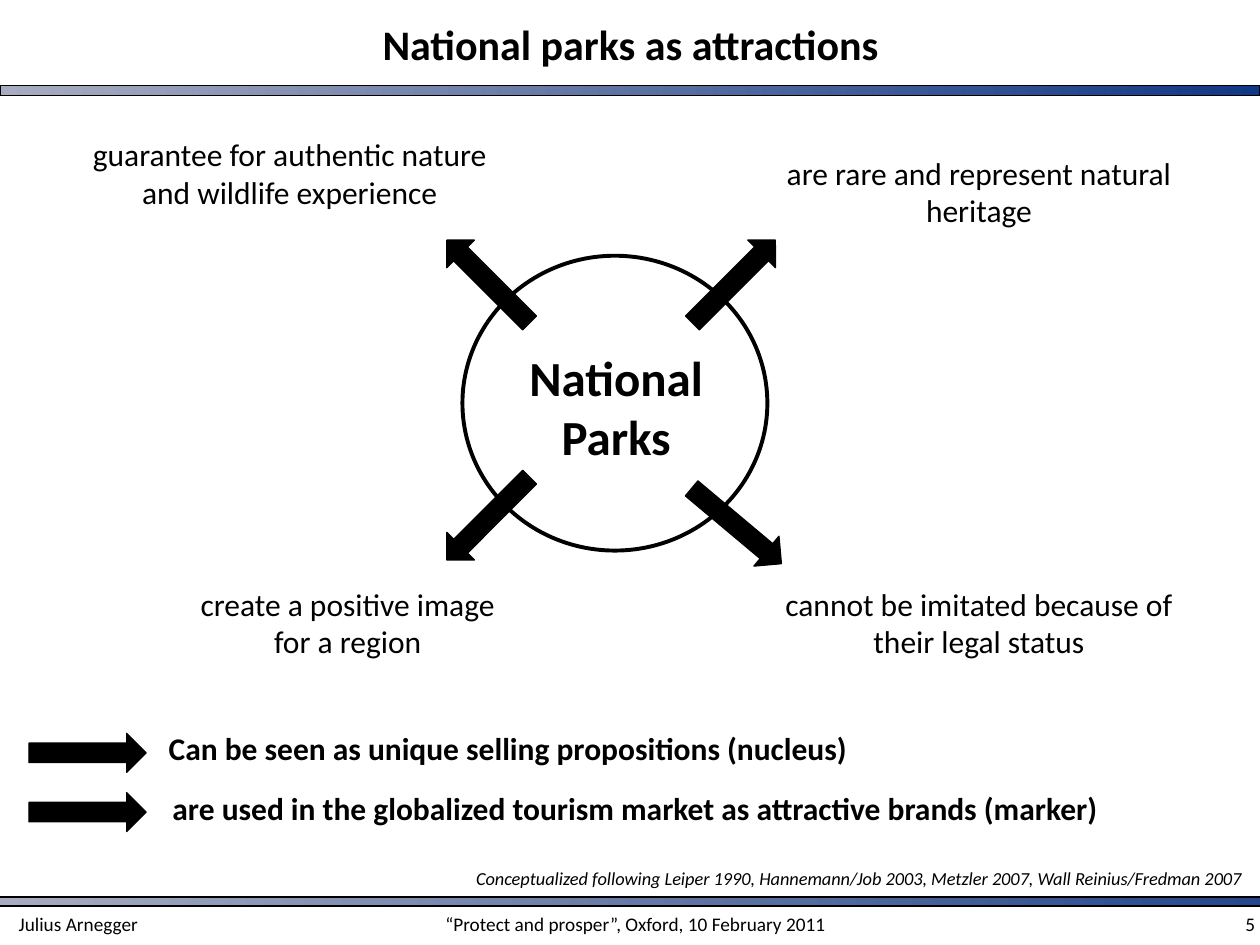
from dataclasses import dataclass
from pptx import Presentation
from pptx.dml.color import RGBColor
from pptx.enum.shapes import MSO_SHAPE
from pptx.enum.text import MSO_ANCHOR, PP_ALIGN
from pptx.util import Inches, Pt


@dataclass(frozen=True)
class Theme:
    font: str = "Calibri"
    ink: RGBColor = RGBColor(0, 0, 0)
    pale: RGBColor = RGBColor(0xA8, 0xAC, 0xC0)
    deep: RGBColor = RGBColor(0x11, 0x38, 0x85)
    title: float = 24
    hub: float = 28
    body: float = 18
    foot: float = 11
    cite: float = 10.5
    thin: float = 0.75
    thick: float = 2.25


@dataclass(frozen=True)
class Box:
    col: float
    row: float
    cols: float
    rows: float


@dataclass(frozen=True)
class Label:
    text: str
    box: Box
    size: float
    align: PP_ALIGN = PP_ALIGN.CENTER
    bold: bool = False
    slant: bool = False
    wrap: bool = True
    anchor: MSO_ANCHOR = MSO_ANCHOR.TOP


@dataclass(frozen=True)
class Arrow:
    col: float
    row: float
    turn: float


LOOK = Theme()
COLS, ROWS = 100, 75
LEFT, RIGHT = PP_ALIGN.LEFT, PP_ALIGN.RIGHT

deck = Presentation()
deck.slide_width, deck.slide_height = Inches(10), Inches(7.5)
slide = deck.slides.add_slide(deck.slide_layouts[6])


def place(box: Box) -> tuple[int, int, int, int]:
    wide, high = deck.slide_width / COLS, deck.slide_height / ROWS
    return (round(box.col * wide), round(box.row * high),
            round(box.cols * wide), round(box.rows * high))


def draw_shape(kind: MSO_SHAPE, box: Box, line: float):
    shape = slide.shapes.add_shape(kind, *place(box))
    shape.shadow.inherit = False
    shape.line.color.rgb = LOOK.ink
    shape.line.width = Pt(line)
    return shape


def draw_bar(box: Box) -> None:
    fill = draw_shape(MSO_SHAPE.RECTANGLE, box, LOOK.thin).fill
    fill.gradient()
    fill.gradient_angle = 0
    for stop, tint in zip(fill.gradient_stops, (LOOK.pale, LOOK.deep)):
        stop.color.rgb = tint


def draw_arrow(arrow: Arrow) -> None:
    box = Box(arrow.col, arrow.row, 3.1, 9.3)
    shape = draw_shape(MSO_SHAPE.UP_ARROW, box, LOOK.thin)
    shape.fill.solid()
    shape.fill.fore_color.rgb = LOOK.ink
    shape.rotation = arrow.turn


def draw_label(label: Label) -> None:
    frame = slide.shapes.add_textbox(*place(label.box)).text_frame
    frame.word_wrap = label.wrap
    frame.vertical_anchor = label.anchor
    para = frame.paragraphs[0]
    para.alignment = label.align
    run = para.add_run()
    run.text = label.text
    font = run.font
    font.name, font.size = LOOK.font, Pt(label.size)
    font.bold, font.italic = label.bold, label.slant
    font.color.rgb = LOOK.ink


BARS = [Box(0, 6.8, 100, 0.8), Box(-0.1, 71.2, 114.9, 0.7)]

ARROWS = [
    Arrow(37.2, 17.7, 315),
    Arrow(56.7, 17.7, 45),
    Arrow(37.2, 36.5, 225),
    Arrow(56.9, 37.1, 130),
    Arrow(5.4, 55.1, 90),
    Arrow(5.4, 59.8, 90),
]

LABELS = [
    Label("National parks as attractions", Box(16.7, 0, 66.7, 7),
          LOOK.title, bold=True, anchor=MSO_ANCHOR.MIDDLE),
    Label("National Parks", Box(39.5, 27.1, 18.8, 10.4), LOOK.hub, bold=True),
    Label("guarantee for authentic nature and wildlife experience",
          Box(6.2, 10.2, 33.6, 7.1), LOOK.body),
    Label("are rare and represent natural heritage",
          Box(60.9, 11.7, 33.6, 7.1), LOOK.body),
    Label("create a positive image for a region",
          Box(13.8, 45.9, 27.6, 7.1), LOOK.body),
    Label("cannot be imitated because of their legal status",
          Box(60.9, 45.9, 33.6, 7.1), LOOK.body),
    Label("Can be seen as unique selling propositions (nucleus)",
          Box(12.4, 57.4, 89.8, 4), LOOK.body, LEFT, bold=True),
    Label("are used in the globalized tourism market as attractive brands (marker)",
          Box(12.7, 62.1, 86.2, 4), LOOK.body, LEFT, bold=True),
    Label("Conceptualized following Leiper 1990, Hannemann/Job 2003, "
          "Metzler 2007, Wall Reinius/Fredman 2007",
          Box(36, 68.3, 64.4, 2.8), LOOK.cite, slant=True, wrap=False),
    Label("Julius Arnegger", Box(0.5, 71.9, 23.7, 3.1), LOOK.foot, LEFT),
    Label("“Protect and prosper”, Oxford, 10 February 2011",
          Box(34.3, 71.9, 32.3, 3.1), LOOK.foot),
    Label("5", Box(88.2, 71.9, 12.4, 3.1), LOOK.foot, RIGHT),
]

for bar in BARS:
    draw_bar(bar)
ring = draw_shape(MSO_SHAPE.OVAL, Box(36.7, 20.3, 24.2, 23.4), LOOK.thick)
ring.fill.background()
for arrow in ARROWS:
    draw_arrow(arrow)
for label in LABELS:
    draw_label(label)

deck.save("out.pptx")
